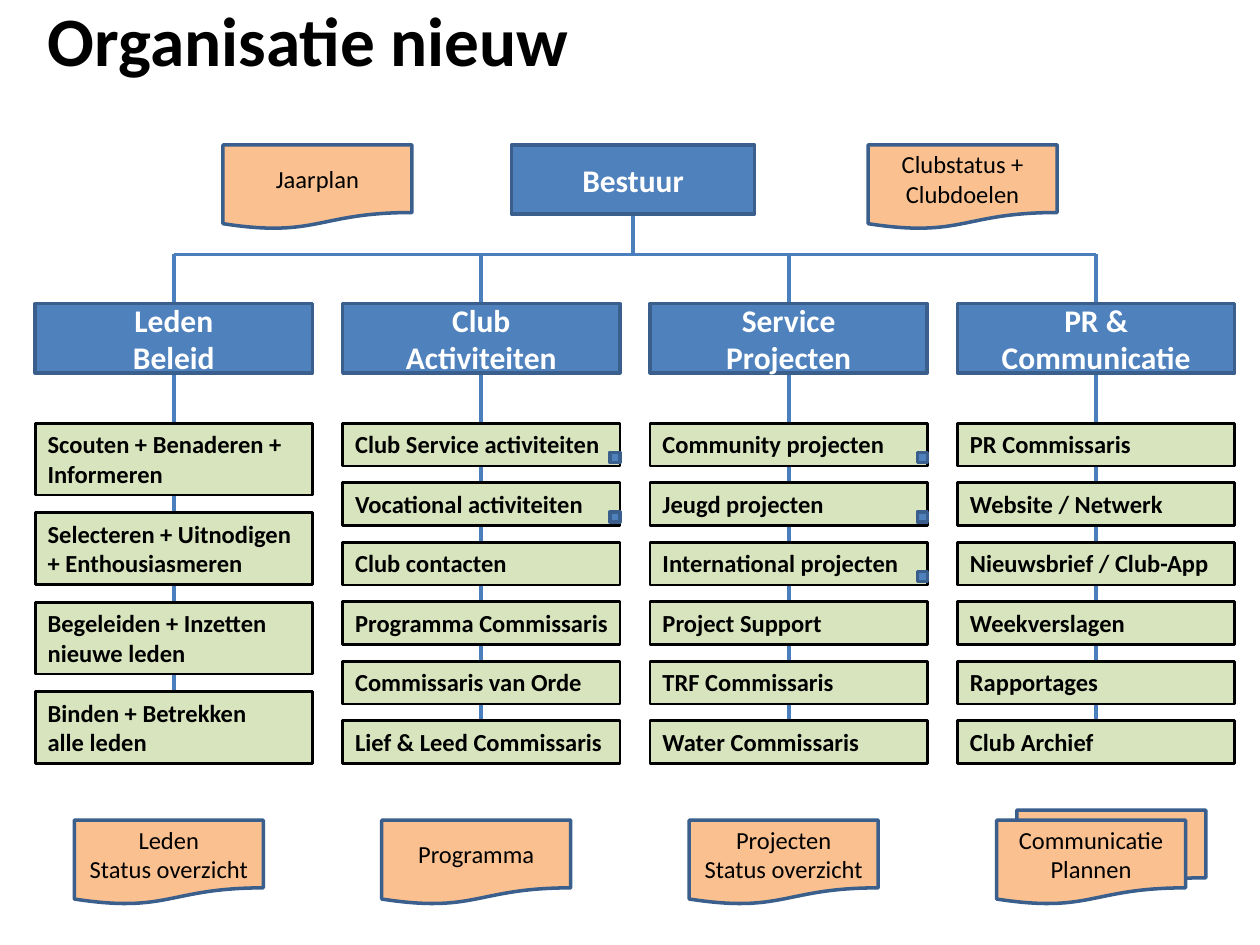
from dataclasses import dataclass

from lxml import etree
from pptx import Presentation
from pptx.dml.color import RGBColor
from pptx.enum import shapes, text
from pptx.oxml import ns
from pptx.util import Inches, Pt


@dataclass(frozen=True)
class Theme:
    font: str = "Calibri"
    blue: str = "4F81BD"
    blue_edge: str = "3A5F8C"
    connector: str = "4B7EBC"
    green: str = "D7E4BD"
    orange: str = "FAC090"
    black: str = "000000"
    white: str = "FFFFFF"
    title_size: float = 39.6
    heading_size: float = 18
    body_size: float = 14
    connector_width: float = 2.25
    edge_width: float = 2
    task_edge_width: float = 1.5


@dataclass(frozen=True)
class Department:
    heading: str
    tasks: tuple[str, ...]
    document: str
    task_height: float = 0.34
    marked_tasks: int = 0
    stacked: bool = False


THEME = Theme()
DEPARTMENTS = (
    Department(
        "Leden\nBeleid",
        ("Scouten + Benaderen +\nInformeren",
         "Selecteren + Uitnodigen + Enthousiasmeren",
         "Begeleiden + Inzetten\nnieuwe leden",
         "Binden + Betrekken\nalle leden"),
        "Leden\nStatus overzicht", task_height=0.57),
    Department(
        "Club\nActiviteiten",
        ("Club Service activiteiten", "Vocational activiteiten",
         "Club contacten", "Programma Commissaris",
         "Commissaris van Orde", "Lief & Leed Commissaris"),
        "Programma", marked_tasks=2),
    Department(
        "Service\nProjecten",
        ("Community projecten", "Jeugd projecten",
         "International projecten", "Project Support",
         "TRF Commissaris", "Water Commissaris"),
        "Projecten\nStatus overzicht", marked_tasks=3),
    Department(
        "PR &\nCommunicatie",
        ("PR Commissaris", "Website / Netwerk", "Nieuwsbrief / Club-App",
         "Weekverslagen", "Rapportages", "Club Archief"),
        "Communicatie\nPlannen", stacked=True),
)

FIRST_CENTER, COLUMN_PITCH = 1.38, 2.44
COLUMN_WIDTH, HEADING_HEIGHT = 2.2, 0.55
BOARD_TOP, BUS_Y, HEADING_TOP = 1.15, 2.02, 2.41
BOARD_LEFT, BOARD_WIDTH = 4.06, 1.93
TASKS_TOP, TASKS_BOTTOM = 3.36, 6.06
DOCUMENT_TOP, DOCUMENT_WIDTH, DOCUMENT_HEIGHT = 6.51, 1.5, 0.67
MARKER = 0.08


def write(frame, content: str, *, size: float, color: str, bold: bool = False,
          align=text.PP_ALIGN.LEFT, anchor=text.MSO_ANCHOR.MIDDLE,
          fit=text.MSO_AUTO_SIZE.NONE) -> None:
    frame.word_wrap = True
    frame.auto_size = fit
    frame.vertical_anchor = anchor
    frame.text = content
    for paragraph in frame.paragraphs:
        paragraph.alignment = align
        font = paragraph.font
        font.name, font.size, font.bold = THEME.font, Pt(size), bold
        font.color.rgb = RGBColor.from_string(color)


def add_box(slide, left: float, top: float, width: float, height: float, *,
            fill: str, edge: str = THEME.blue_edge,
            edge_width: float = THEME.edge_width,
            preset=shapes.MSO_SHAPE.RECTANGLE):
    box = slide.shapes.add_shape(
        preset, Inches(left), Inches(top), Inches(width), Inches(height))
    box.shadow.inherit = False
    box.fill.solid()
    box.fill.fore_color.rgb = RGBColor.from_string(fill)
    box.line.color.rgb = RGBColor.from_string(edge)
    box.line.width = Pt(edge_width)
    return box


def add_line(slide, x1: float, y1: float, x2: float, y2: float) -> None:
    line = slide.shapes.add_connector(
        shapes.MSO_CONNECTOR.STRAIGHT,
        Inches(x1), Inches(y1), Inches(x2), Inches(y2))
    line.line.color.rgb = RGBColor.from_string(THEME.connector)
    line.line.width = Pt(THEME.connector_width)
    etree.SubElement(line._element.spPr, ns.qn("a:effectLst"))


def add_heading(slide, left: float, top: float, width: float, label: str) -> None:
    box = add_box(slide, left, top, width, HEADING_HEIGHT, fill=THEME.blue)
    write(box.text_frame, label, size=THEME.heading_size, color=THEME.white,
          bold=True, align=text.PP_ALIGN.CENTER)


def add_document(slide, left: float, top: float, label: str = "") -> None:
    document = add_box(slide, left, top, DOCUMENT_WIDTH, DOCUMENT_HEIGHT,
                       fill=THEME.orange,
                       preset=shapes.MSO_SHAPE.FLOWCHART_DOCUMENT)
    if label:
        write(document.text_frame, label, size=THEME.body_size,
              color=THEME.black, align=text.PP_ALIGN.CENTER)


def add_tasks(slide, left: float, department: Department) -> None:
    """Spread the tasks evenly over the column, marking the first ones."""
    height = department.task_height
    pitch = (TASKS_BOTTOM - TASKS_TOP - height) / (len(department.tasks) - 1)
    for index, task in enumerate(department.tasks):
        top = TASKS_TOP + index * pitch
        box = add_box(slide, left, top, COLUMN_WIDTH, height, fill=THEME.green,
                      edge=THEME.black, edge_width=THEME.task_edge_width)
        box.text_frame.margin_right = Inches(0.08)
        write(box.text_frame, task, size=THEME.body_size, color=THEME.black,
              bold=True, anchor=text.MSO_ANCHOR.TOP,
              fit=text.MSO_AUTO_SIZE.SHAPE_TO_FIT_TEXT)
        if index < department.marked_tasks:
            add_box(slide, left + COLUMN_WIDTH - MARKER, top + 0.23,
                    MARKER, MARKER, fill=THEME.blue)


def add_department(slide, center: float, department: Department) -> None:
    left = center - COLUMN_WIDTH / 2
    add_line(slide, center, BUS_Y, center, TASKS_BOTTOM - 0.2)
    add_heading(slide, left, HEADING_TOP, COLUMN_WIDTH, department.heading)
    add_tasks(slide, left, department)
    document_left = center - DOCUMENT_WIDTH / 2 - 0.04
    if department.stacked:
        add_document(slide, document_left + 0.16, DOCUMENT_TOP - 0.08)
    add_document(slide, document_left, DOCUMENT_TOP, department.document)


def main() -> None:
    deck = Presentation()
    deck.slide_width, deck.slide_height = Inches(10), Inches(7.5)
    slide = deck.slides.add_slide(deck.slide_layouts[5])

    title = slide.shapes.title
    title.left, title.top = Inches(0.28), Inches(0)
    title.width, title.height = Inches(9.38), Inches(0.61)
    write(title.text_frame, "Organisatie nieuw", size=THEME.title_size,
          color=THEME.black, bold=True)

    board_center = BOARD_LEFT + BOARD_WIDTH / 2
    last_center = FIRST_CENTER + (len(DEPARTMENTS) - 1) * COLUMN_PITCH
    add_line(slide, board_center, BOARD_TOP + HEADING_HEIGHT, board_center, BUS_Y)
    add_line(slide, FIRST_CENTER, BUS_Y, last_center, BUS_Y)
    add_heading(slide, BOARD_LEFT, BOARD_TOP, BOARD_WIDTH, "Bestuur")
    add_document(slide, 1.77, BOARD_TOP, "Jaarplan")
    add_document(slide, 6.89, BOARD_TOP, "Clubstatus + Clubdoelen")

    for index, department in enumerate(DEPARTMENTS):
        add_department(slide, FIRST_CENTER + index * COLUMN_PITCH, department)

    deck.save("out.pptx")


if __name__ == "__main__":
    main()
